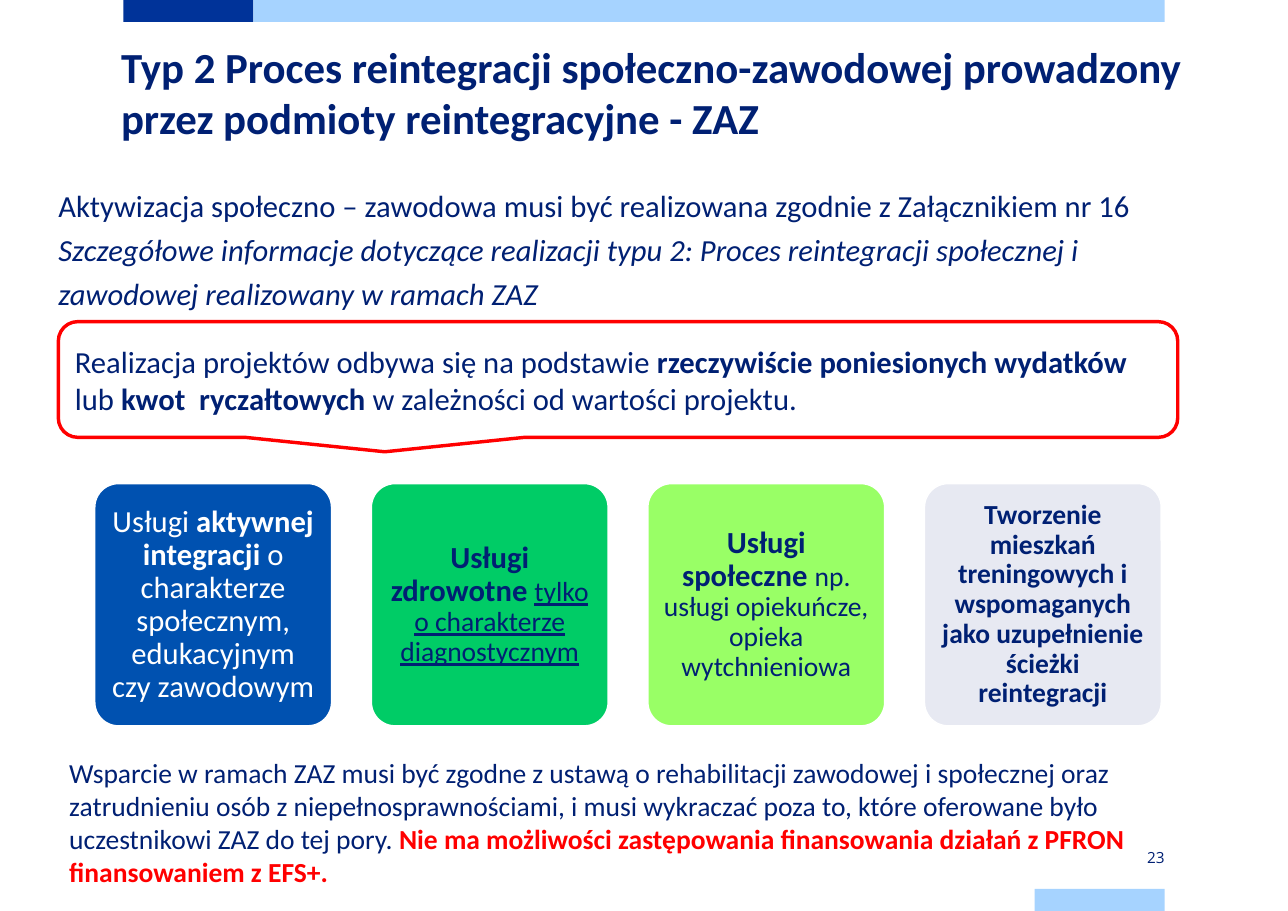
from dataclasses import dataclass

from pptx import Presentation
from pptx.dml.color import RGBColor
from pptx.enum.shapes import MSO_SHAPE
from pptx.enum.text import MSO_ANCHOR, PP_ALIGN
from pptx.util import Inches, Pt

RECTANGLE = MSO_SHAPE.RECTANGLE
ROUNDED = MSO_SHAPE.ROUNDED_RECTANGLE
CALLOUT = MSO_SHAPE.ROUNDED_RECTANGULAR_CALLOUT
TOP = MSO_ANCHOR.TOP
MIDDLE = MSO_ANCHOR.MIDDLE
LEFT = PP_ALIGN.LEFT
CENTER = PP_ALIGN.CENTER
RIGHT = PP_ALIGN.RIGHT

NAVY = RGBColor(0x00, 0x20, 0x73)
EU_BLUE = RGBColor(0x00, 0x33, 0x99)
SKY = RGBColor(0xA6, 0xD3, 0xFF)
BLUE = RGBColor(0x00, 0x51, 0xB0)
GREEN = RGBColor(0x00, 0xCC, 0x66)
LIME = RGBColor(0x99, 0xFF, 0x66)
GREY = RGBColor(0xE7, 0xE9, 0xF2)
WHITE = RGBColor(0xFF, 0xFF, 0xFF)
RED = RGBColor(0xFF, 0x00, 0x00)


@dataclass
class Run:
    text: str
    size: float = 20
    color: RGBColor = NAVY
    bold: bool = False
    italic: bool = False
    underline: bool = False
    font: str = "Calibri"


class SlideBuilder:
    def __init__(self, slide):
        self.slide = slide

    def fill_text(self, shape, runs, insets=(0.1, 0.05), anchor=TOP, align=LEFT, spacing=1.0):
        frame = shape.text_frame
        frame.word_wrap = True
        frame.vertical_anchor = anchor
        frame.margin_left = frame.margin_right = Inches(insets[0])
        frame.margin_top = frame.margin_bottom = Inches(insets[1])
        paragraph = frame.paragraphs[0]
        paragraph.alignment = align
        paragraph.line_spacing = spacing
        for part in runs:
            run = paragraph.add_run()
            run.text = part.text
            run.font.name = part.font
            run.font.size = Pt(part.size)
            run.font.bold = part.bold
            run.font.italic = part.italic
            run.font.underline = part.underline
            run.font.color.rgb = part.color

    def text(self, box, runs, **layout):
        self.fill_text(self.slide.shapes.add_textbox(*map(Inches, box)), runs, **layout)

    def shape(self, kind, box, fill=None, line=None, width=1):
        shape = self.slide.shapes.add_shape(kind, *map(Inches, box))
        shape.shadow.inherit = False
        if fill is None:
            shape.fill.background()
        else:
            shape.fill.solid()
            shape.fill.fore_color.rgb = fill
        if line is None:
            shape.line.fill.background()
        else:
            shape.line.color.rgb = line
            shape.line.width = Pt(width)
        return shape

    def card(self, box, fill, runs):
        card = self.shape(ROUNDED, box, fill, WHITE)
        card.adjustments[0] = 0.1
        self.fill_text(card, runs, insets=(0.08, 0.08), anchor=MIDDLE, align=CENTER, spacing=0.9)

    def callout(self, box, runs):
        callout = self.shape(CALLOUT, box, line=RED, width=2.25)
        self.fill_text(callout, runs, anchor=MIDDLE)


SERVICES = [
    (BLUE, [
        Run("Usługi ", color=WHITE),
        Run("aktywnej integracji ", color=WHITE, bold=True),
        Run("o charakterze społecznym, edukacyjnym czy zawodowym", color=WHITE),
    ]),
    (GREEN, [
        Run("Usługi zdrowotne ", bold=True),
        Run("tylko o charakterze diagnostycznym", 18, underline=True),
    ]),
    (LIME, [
        Run("Usługi społeczne ", bold=True),
        Run("np. usługi opiekuńcze, opieka wytchnieniowa", 18),
    ]),
    (GREY, [
        Run("Tworzenie mieszkań treningowych i wspomaganych jako uzupełnienie "
            "ścieżki reintegracji", 18, bold=True),
    ]),
]


def main():
    presentation = Presentation()
    presentation.slide_width = Inches(11.69)
    presentation.slide_height = Inches(8.27)
    builder = SlideBuilder(presentation.slides.add_slide(presentation.slide_layouts[6]))

    builder.shape(RECTANGLE, (1.12, 0, 1.18, 0.2), EU_BLUE)
    builder.shape(RECTANGLE, (2.3, 0, 8.27, 0.2), SKY)
    builder.shape(RECTANGLE, (9.39, 8.07, 1.18, 0.2), SKY)
    builder.text((9.39, 7.68, 1.18, 0.2), [Run("23", 10, font="Open Sans")],
                 insets=(0, 0), anchor=MIDDLE, align=RIGHT)

    builder.text((1, 0.32, 9.82, 1.04), [
        Run("Typ 2 Proces reintegracji społeczno-zawodowej prowadzony "
            "przez podmioty reintegracyjne - ZAZ", 28, bold=True),
    ])
    builder.text((0.53, 1.63, 10.16, 1.18), [
        Run("Aktywizacja społeczno – zawodowa musi być realizowana zgodnie "
            "z Załącznikiem nr 16 "),
        Run("Szczegółowe informacje dotyczące realizacji typu 2: Proces reintegracji "
            "społecznej i zawodowej realizowany w ramach ZAZ", italic=True),
    ], insets=(0, 0), spacing=1.2)

    builder.callout((0.53, 2.92, 10.16, 1.05), [
        Run("Realizacja projektów odbywa się na podstawie "),
        Run("rzeczywiście poniesionych wydatków", bold=True),
        Run(" lub "),
        Run("kwot  ryczałtowych ", bold=True),
        Run("w zależności od wartości projektu."),
    ])

    for index, (fill, runs) in enumerate(SERVICES):
        builder.card((0.86 + 2.51 * index, 4.39, 2.15, 2.2), fill, runs)

    builder.text((0.53, 6.81, 9.81, 1.31), [
        Run("Wsparcie w ramach ZAZ musi być zgodne z ustawą o rehabilitacji zawodowej "
            "i społecznej oraz zatrudnieniu osób z niepełnosprawnościami, i musi "
            "wykraczać poza to, które oferowane było uczestnikowi ZAZ do tej pory. ", 18),
        Run("Nie ma możliwości zastępowania finansowania działań z PFRON "
            "finansowaniem z EFS+.", 18, RED, bold=True),
    ])

    presentation.save("out.pptx")


if __name__ == "__main__":
    main()
